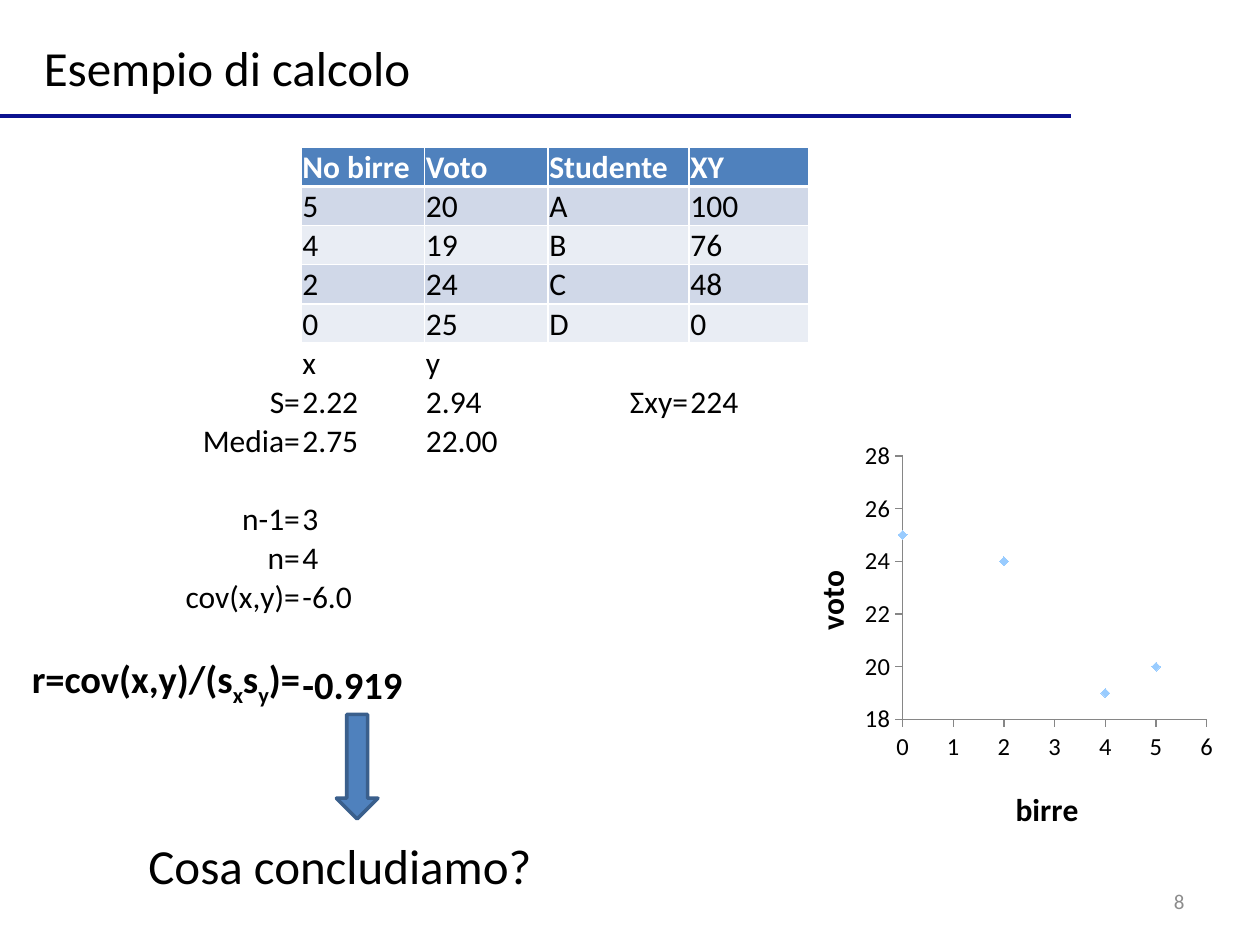
from lxml import etree
from pptx import Presentation
from pptx.chart.data import XyChartData
from pptx.dml.color import RGBColor
from pptx.enum.chart import XL_CHART_TYPE, XL_MARKER_STYLE, XL_TICK_MARK
from pptx.enum.shapes import MSO_CONNECTOR, MSO_SHAPE
from pptx.enum.text import MSO_ANCHOR, MSO_AUTO_SIZE, PP_ALIGN
from pptx.oxml.ns import qn
from pptx.util import Inches, Pt

LEFT, RIGHT = PP_ALIGN.LEFT, PP_ALIGN.RIGHT
MIDDLE, TOP, BOTTOM = MSO_ANCHOR.MIDDLE, MSO_ANCHOR.TOP, MSO_ANCHOR.BOTTOM
FIT_SHAPE = MSO_AUTO_SIZE.SHAPE_TO_FIT_TEXT
STRAIGHT = MSO_CONNECTOR.STRAIGHT
DOWN_ARROW = MSO_SHAPE.DOWN_ARROW
SCATTER = XL_CHART_TYPE.XY_SCATTER
DIAMOND = XL_MARKER_STYLE.DIAMOND
OUTSIDE = XL_TICK_MARK.OUTSIDE

BLACK = RGBColor(0, 0, 0)
WHITE = RGBColor(0xFF, 0xFF, 0xFF)
GRAY = RGBColor(0x8C, 0x8C, 0x8C)
AXIS_GRAY = RGBColor(0x86, 0x86, 0x86)
NAVY = RGBColor(0x0C, 0x12, 0x90)
BLUE = RGBColor(0x4F, 0x81, 0xBD)
DARK_BLUE = RGBColor(0x3A, 0x5F, 0x8C)
LIGHT_BLUE = RGBColor(0x99, 0xCC, 0xFF)
BANDS = (RGBColor(0xD0, 0xD8, 0xE8), RGBColor(0xE9, 0xED, 0xF4))

BEERS, GRADES = (5, 4, 2, 0), (20, 19, 24, 25)
COLUMNS = (2.4, 0.98, 0.98, 1.12, 0.95)
FORMULA = ("r=cov(x,y)/(s", "x", "s", "y", ")=")
DATA = [("", "No birre", "Voto", "Studente", "XY")] + [
    ("", str(x), str(y), student, str(x * y))
    for x, y, student in zip(BEERS, GRADES, "ABCD")
]
RESULTS = [
    ("", "x", "y", "", ""),
    ("S=", "2.22", "2.94", "Σxy=", "224"),
    ("Media=", "2.75", "22.00", "", ""),
    ("",) * 5,
    ("n-1=", "3", "", "", ""),
    ("n=", "4", "", "", ""),
    ("cov(x,y)=", "-6.0", "", "", ""),
    ("",) * 5,
    (FORMULA, "-0.919", "", "", ""),
]


def write(tf, text, size=18, color=BLACK, bold=False, align=LEFT, font="Calibri"):
    """Fill a text frame; in a tuple every second part is a subscript."""
    p = tf.paragraphs[0]
    p.alignment = align
    parts = (text,) if isinstance(text, str) else text
    for i, part in enumerate(parts):
        if not part:
            p._p.get_or_add_endParaRPr().set("sz", str(size * 100))
            continue
        r = p.add_run()
        r.text = part
        r.font.name, r.font.size = font, Pt(size)
        r.font.bold, r.font.color.rgb = bold, color
        if i % 2:
            r.font._element.set("baseline", "-25000")


def set_borders(cell, bottom):
    tc_pr = cell._tc.get_or_add_tcPr()
    for i, (side, width) in enumerate((("L", 1), ("R", 1), ("T", 1), ("B", bottom))):
        ln = etree.Element(qn(f"a:ln{side}"), w=str(Pt(width)))
        fill = etree.SubElement(ln, qn("a:solidFill"))
        etree.SubElement(fill, qn("a:srgbClr"), val=str(WHITE))
        tc_pr.insert(i, ln)


def set_layout(parent, index, **fractions):
    """Place a chart part by fractions of the chart's size."""
    for old in parent.findall(qn("c:layout")):
        parent.remove(old)
    layout = etree.Element(qn("c:layout"))
    manual = etree.SubElement(layout, qn("c:manualLayout"))
    if "w" in fractions:
        etree.SubElement(manual, qn("c:layoutTarget"), val="inner")
    for mode in ("xMode", "yMode"):
        etree.SubElement(manual, qn(f"c:{mode}"), val="edge")
    for key, value in fractions.items():
        etree.SubElement(manual, qn(f"c:{key}"), val=str(value))
    parent.insert(index, layout)


class SlideBuilder:
    def __init__(self, slide):
        self.shapes = slide.shapes

    def text(self, text, x, y, w, h, **style):
        sp = self.shapes.add_textbox(Inches(x), Inches(y), Inches(w), Inches(h))
        tf = sp.text_frame
        tf.word_wrap = False
        tf.auto_size = FIT_SHAPE
        tf.vertical_anchor = MIDDLE
        write(tf, text, **style)

    def rule(self, x1, x2, y):
        line = self.shapes.add_connector(
            STRAIGHT, Inches(x1), Inches(y), Inches(x2), Inches(y))
        line.line.color.rgb = NAVY
        line.line.width = Pt(2)
        etree.SubElement(line._element.spPr, qn("a:effectLst"))

    def arrow(self, x, y, w, h):
        sp = self.shapes.add_shape(
            DOWN_ARROW, Inches(x), Inches(y), Inches(w), Inches(h))
        sp.shadow.inherit = False
        sp.fill.solid()
        sp.fill.fore_color.rgb = BLUE
        sp.line.color.rgb = DARK_BLUE
        sp.line.width = Pt(2)

    def table(self, x, y, row_height):
        rows = DATA + RESULTS
        table = self.shapes.add_table(
            len(rows), len(COLUMNS), Inches(x), Inches(y),
            Inches(sum(COLUMNS)), Inches(row_height * len(rows))).table
        table.first_row = table.horz_banding = False
        for column, width in zip(table.columns, COLUMNS):
            column.width = Inches(width)
        for i, row in enumerate(rows):
            table.rows[i].height = Inches(row_height)
            for j, text in enumerate(row):
                self.cell(table.cell(i, j), text, i, j)

    def cell(self, cell, text, i, j):
        header, last = i == 0, text in RESULTS[-1][:2]
        in_data = i < len(DATA)
        cell.margin_left = cell.margin_right = cell.margin_top = Inches(0.01)
        cell.margin_bottom = 0
        cell.vertical_anchor = TOP if in_data else BOTTOM
        if in_data and j:
            cell.fill.solid()
            cell.fill.fore_color.rgb = BLUE if header else BANDS[(i - 1) % 2]
            set_borders(cell, bottom=1.5 if header else 1)
        else:
            cell.fill.background()
        write(cell.text_frame, text, size=22 if last else 18,
              color=WHITE if header else BLACK, bold=header or last,
              align=RIGHT if text and text[-1].endswith("=") else LEFT)

    def scatter(self, x, y, w, h):
        data = XyChartData()
        series = data.add_series("Series 1")
        for beers, grade in zip(BEERS, GRADES):
            series.add_data_point(beers, grade)
        chart = self.shapes.add_chart(
            SCATTER, Inches(x), Inches(y), Inches(w), Inches(h), data).chart
        chart.has_legend = chart.has_title = False
        chart.font.name, chart.font.size = "Calibri", Pt(14)
        chart.font.color.rgb = BLACK
        plot = chart.plots[0]
        plot.vary_by_categories = False
        points = plot.series[0]
        points.smooth = False
        points.format.line.fill.background()
        points.marker.style, points.marker.size = DIAMOND, 5
        points.marker.format.fill.solid()
        points.marker.format.fill.fore_color.rgb = LIGHT_BLUE
        points.marker.format.line.color.rgb = LIGHT_BLUE
        for axis, title, low, high, step, tx, ty in (
                (chart.category_axis, "birre", 0, 6, 1, 0.52, 0.84),
                (chart.value_axis, "voto", 18, 28, 2, 0.06, 0.32)):
            axis.minimum_scale, axis.maximum_scale = low, high
            axis.major_unit = step
            axis.has_major_gridlines = False
            axis.major_tick_mark = OUTSIDE
            axis.format.line.color.rgb = AXIS_GRAY
            write(axis.axis_title.text_frame, title, bold=True)
            set_layout(axis.axis_title._element, 1, x=tx, y=ty)
        set_layout(chart._chartSpace.chart.plotArea, 0,
                   x=0.28, y=0.06, w=0.68, h=0.63)


def main():
    prs = Presentation()
    prs.slide_width, prs.slide_height = Inches(10), Inches(7.5)
    s = SlideBuilder(prs.slides.add_slide(prs.slide_layouts[6]))
    s.text("8", 7.17, 6.95, 2.33, 0.4, size=12, color=GRAY, align=RIGHT)
    s.text("Esempio di calcolo", 0.25, 0.25, 3.14, 0.57, size=28)
    s.rule(0, 8.5, 0.92)
    s.table(-0.01, 1.17, 0.3)
    s.scatter(6.17, 3.42, 3.55, 3.32)
    s.arrow(2.67, 5.67, 0.33, 0.83)
    s.text("Cosa concludiamo?", 1.08, 6.58, 3.28, 0.57, size=28)
    prs.save("out.pptx")


if __name__ == "__main__":
    main()
